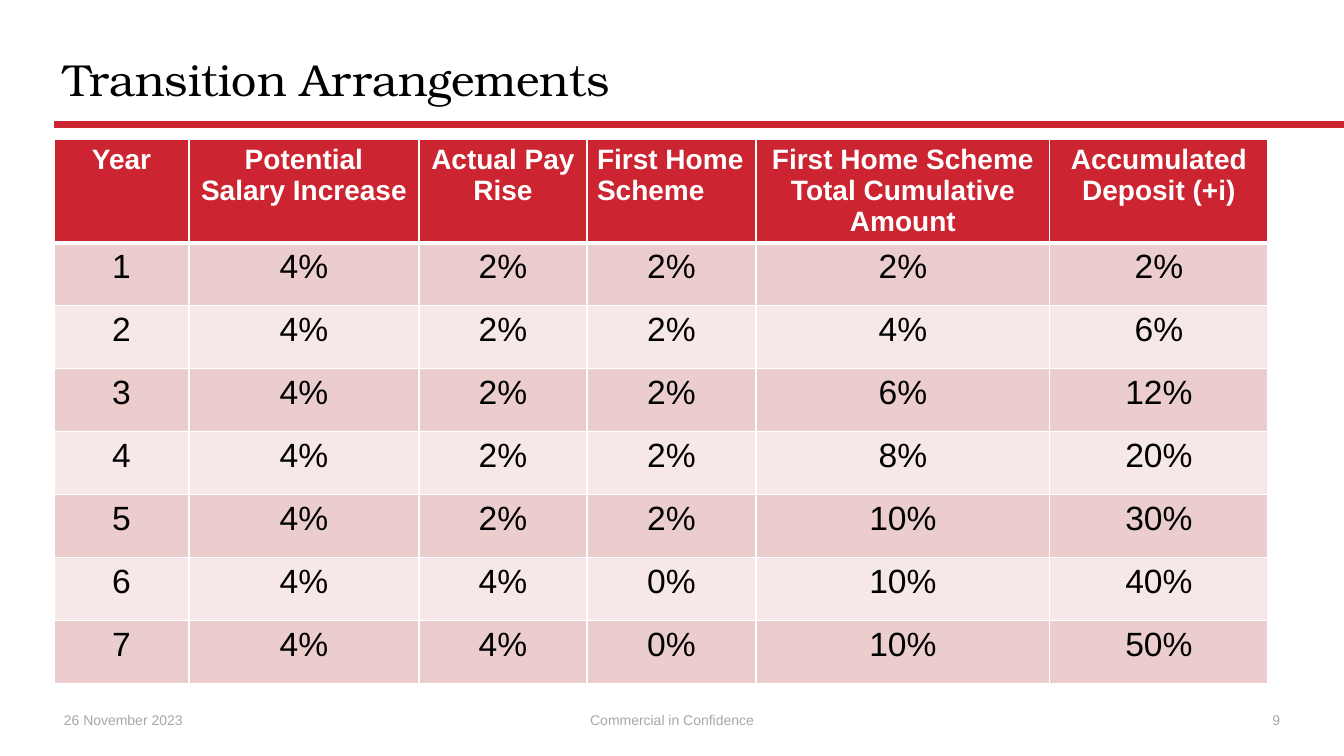
"""Build the Transition Arrangements slide with its yearly table."""
import pptx
import pptx.dml.color
import pptx.enum.shapes
import pptx.enum.text
import pptx.oxml
import pptx.oxml.ns
import pptx.util
from lxml import etree

PX = 914400 / 100.8
RED, PINK, PALE, GREY = "CC2430", "ECCDCD", "F6E8E8", "A6A7AB"
ALIGN = pptx.enum.text.PP_ALIGN
LEFT, CENTER, RIGHT = ALIGN.LEFT, ALIGN.CENTER, ALIGN.RIGHT


def rgb(value):
    return pptx.dml.color.RGBColor.from_string(value)


def write(tf, text, align, color, **font):
    p = tf.paragraphs[0]
    p.alignment = align
    r = p.add_run()
    r.text = text
    for name, value in font.items():
        setattr(r.font, name, value)
    r.font.color.rgb = rgb(color)


prs = pptx.Presentation()
prs.slide_width, prs.slide_height = round(1344 * PX), round(756 * PX)
s = prs.slides.add_slide(prs.slide_layouts[6])

rule = s.shapes.add_connector(
    pptx.enum.shapes.MSO_CONNECTOR.STRAIGHT,
    *[round(v * PX) for v in (54, 125, 1344, 125)])
rule.line.color.rgb = rgb(RED)
rule.line.width = pptx.util.Pt(5)
etree.SubElement(rule._element.spPr, pptx.oxml.ns.qn("a:effectLst"))

rows = [
    ["Year", "Potential Salary Increase", "Actual Pay Rise", "First Home Scheme",
     "First Home Scheme Total Cumulative Amount", "Accumulated Deposit (+i)"],
    ["1", "4%", "2%", "2%", "2%", "2%"],
    ["2", "4%", "2%", "2%", "4%", "6%"],
    ["3", "4%", "2%", "2%", "6%", "12%"],
    ["4", "4%", "2%", "2%", "8%", "20%"],
    ["5", "4%", "2%", "2%", "10%", "30%"],
    ["6", "4%", "4%", "0%", "10%", "40%"],
    ["7", "4%", "4%", "0%", "10%", "50%"],
]
widths = [135, 230, 168, 169, 294, 218]
heights = [103] + [63] * 7
table = s.shapes.add_table(
    len(rows), len(widths),
    *[round(v * PX) for v in (54, 139, sum(widths), sum(heights))]).table
for col, width in zip(table.columns, widths):
    col.width = round(width * PX)
for row, height in zip(table.rows, heights):
    row.height = round(height * PX)

for i, values in enumerate(rows):
    for j, text in enumerate(values):
        cell = table.cell(i, j)
        tcPr = cell._tc.get_or_add_tcPr()
        for side in "LRTB":
            thick = (i, side) in [(0, "B"), (1, "T")]
            tcPr.append(pptx.oxml.parse_xml(
                f'<a:ln{side} {pptx.oxml.ns.nsdecls("a")} w="{38100 if thick else 12700}">'
                f'<a:solidFill><a:srgbClr val="FFFFFF"/></a:solidFill></a:ln{side}>'))
        cell.fill.solid()
        cell.fill.fore_color.rgb = rgb(RED if i == 0 else PINK if i % 2 else PALE)
        write(cell.text_frame, text, LEFT if (i, j) == (0, 3) else CENTER,
              "000000" if i else "FFFFFF", name="Arial", bold=i == 0,
              size=pptx.util.Pt(24 if i else 20))

labels = [
    ("Transition Arrangements", (54, 40, 1236, 85), LEFT, "000000", "TeX Gyre Bonum", 32),
    ("26 November 2023", (54, 700, 302, 40), LEFT, GREY, "Arial", 10),
    ("Commercial in Confidence", (445, 700, 454, 40), CENTER, GREY, "Arial", 10),
    ("9", (988, 700, 302, 40), RIGHT, GREY, "Arial", 10),
]
for text, box, align, color, name, size in labels:
    tf = s.shapes.add_textbox(*[round(v * PX) for v in box]).text_frame
    tf.word_wrap = True
    tf.vertical_anchor = pptx.enum.text.MSO_ANCHOR.MIDDLE
    write(tf, text, align, color, name=name, size=pptx.util.Pt(size))
    if size == 32:
        tf.paragraphs[0].line_spacing = 0.9

prs.save("out.pptx")
